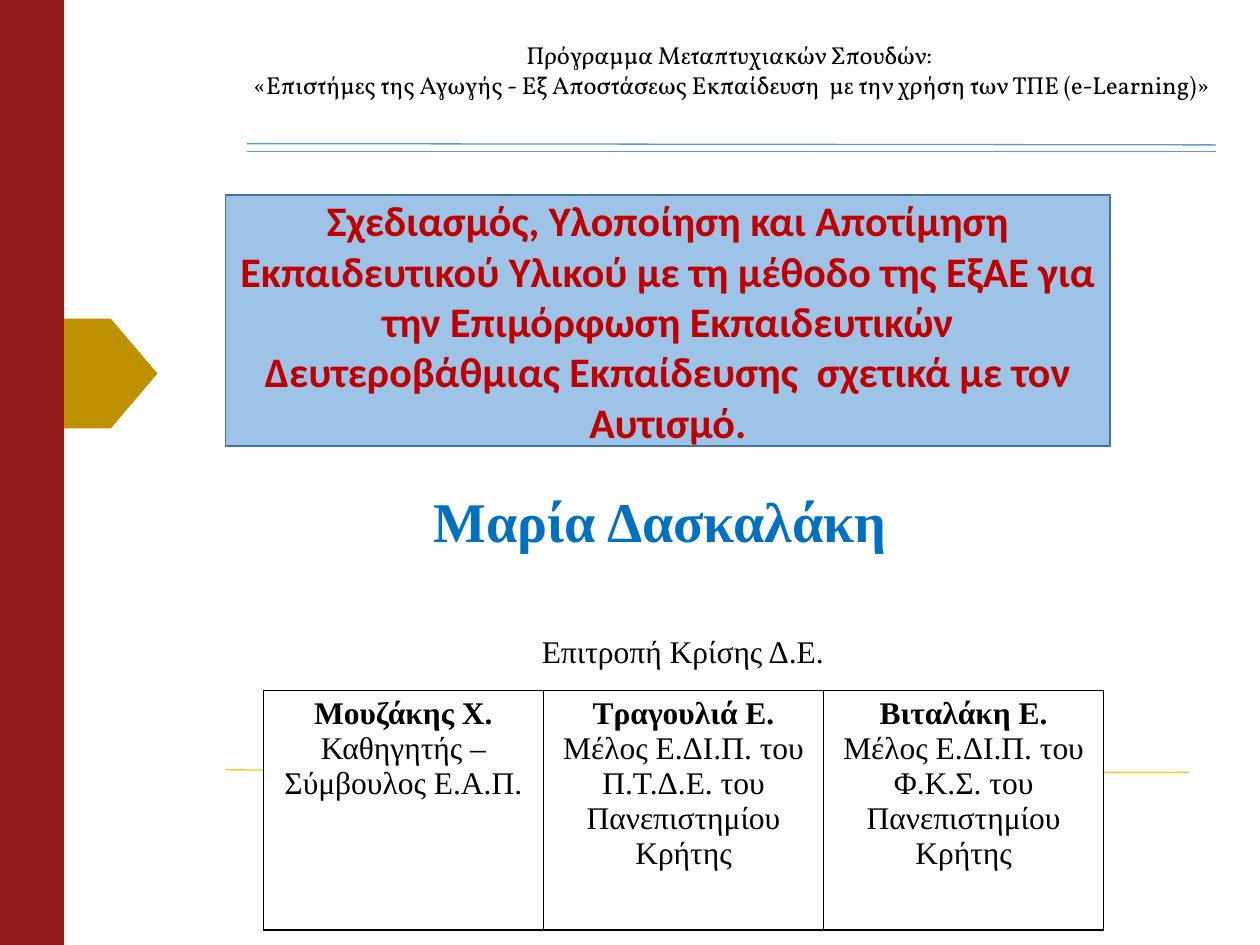
"""Build the title slide of a Greek master's thesis presentation."""
import pptx
import pptx.dml.color
import pptx.enum.shapes
import pptx.enum.text
import pptx.oxml
import pptx.oxml.ns
import pptx.util
from pptx.util import Inches

RGBColor = pptx.dml.color.RGBColor
Anchor = pptx.enum.text.MSO_ANCHOR
ShapeType = pptx.enum.shapes.MSO_SHAPE

BLACK = RGBColor(0x00, 0x00, 0x00)
WHITE = RGBColor(0xFF, 0xFF, 0xFF)
CRIMSON = RGBColor(0x93, 0x1B, 0x1B)
GOLD = RGBColor(0xBF, 0x90, 0x00)
RULE_BLUE = RGBColor(0x5B, 0x9B, 0xD5)
RULE_YELLOW = RGBColor(0xFF, 0xC6, 0x1A)
PANEL_FILL = RGBColor(0x9D, 0xC3, 0xE6)
PANEL_LINE = RGBColor(0x43, 0x73, 0x9E)
TITLE_RED = RGBColor(0xC0, 0x00, 0x00)
NAME_BLUE = RGBColor(0x00, 0x70, 0xC0)
SERIF = "Times New Roman"

TITLE = (
    "Σχεδιασμός, Υλοποίηση και Αποτίμηση Εκπαιδευτικού Υλικού με τη μέθοδο "
    "της ΕξΑΕ για την Επιμόρφωση Εκπαιδευτικών Δευτεροβάθμιας Εκπαίδευσης  "
    "σχετικά με τον Αυτισμό."
)
PROGRAMME = (
    "Πρόγραμμα Μεταπτυχιακών Σπουδών: \n"
    "«Επιστήμες της Αγωγής - Εξ Αποστάσεως Εκπαίδευση  με την χρήση των ΤΠΕ (e-Learning)»"
)
TEXT_BOXES = [
    (PROGRAMME, (1.76, 0.27, 8.1, 0.57), dict(size=14, font="Vollkorn")),
    ("Μαρία Δασκαλάκη", (1.5, 3.81, 7.48, 0.64), dict(size=32, color=NAME_BLUE, bold=True)),
    ("Επιτροπή Κρίσης Δ.Ε.", (1.68, 4.97, 7.48, 0.4), dict(size=18)),
]
COMMITTEE = [
    ("Μουζάκης Χ.", "Καθηγητής – Σύμβουλος Ε.Α.Π."),
    ("Τραγουλιά Ε.", "Μέλος Ε.ΔΙ.Π. του Π.Τ.Δ.Ε. του Πανεπιστημίου Κρήτης"),
    ("Βιταλάκη Ε.", "Μέλος Ε.ΔΙ.Π. του Φ.Κ.Σ. του Πανεπιστημίου Κρήτης"),
]
SIDE_SHAPES = [
    (ShapeType.RECTANGLE, (0, 0, 0.51, 7.5), CRIMSON),
    (ShapeType.PENTAGON, (0.51, 2.53, 0.74, 0.87), GOLD),
]
RULES = [
    ((1.96, 1.14, 9.65, 1.15), RULE_BLUE),
    ((1.96, 1.2, 9.65, 1.2), RULE_BLUE),
    ((1.79, 6.11, 9.44, 6.13), RULE_YELLOW),
]
TITLE_BOX = (1.79, 1.55, 7.02, 1.99)
TABLE_BOX = (2.09, 5.48, 6.67, 1.9)


def inches(values):
    return [Inches(value) for value in values]


def write_text(frame, text, *, size, font=SERIF, color=BLACK, bold=False,
               first_bold=False, anchor=Anchor.TOP):
    frame.word_wrap = True
    frame.vertical_anchor = anchor
    for index, line in enumerate(text.split("\n")):
        paragraph = frame.paragraphs[0] if index == 0 else frame.add_paragraph()
        paragraph.alignment = pptx.enum.text.PP_ALIGN.CENTER
        run = paragraph.add_run()
        run.text = line
        run.font.size = pptx.util.Pt(size)
        run.font.name = font
        run.font.bold = bold or (first_bold and index == 0)
        run.font.color.rgb = color


def add_rule(slide, ends, color):
    rule = slide.shapes.add_connector(pptx.enum.shapes.MSO_CONNECTOR.STRAIGHT, *inches(ends))
    rule.line.color.rgb = color
    rule.line.width = pptx.util.Pt(0.75)
    pptx.oxml.ns.qn("a:effectLst")
    rule._element.spPr.append(pptx.oxml.parse_xml(
        f"<a:effectLst {pptx.oxml.ns.nsdecls('a')}/>"))


def add_title(slide):
    title = slide.shapes.title
    title.left, title.top, title.width, title.height = inches(TITLE_BOX)
    title._element.spPr.append(pptx.oxml.parse_xml(
        f'<a:prstGeom {pptx.oxml.ns.nsdecls("a")} prst="roundRect"><a:avLst/></a:prstGeom>'))
    title.fill.solid()
    title.fill.fore_color.rgb = PANEL_FILL
    title.line.color.rgb = PANEL_LINE
    title.line.width = pptx.util.Pt(1)
    title.text_frame.auto_size = pptx.enum.text.MSO_AUTO_SIZE.NONE
    write_text(title.text_frame, TITLE, size=24, font="Calibri", color=TITLE_RED,
               bold=True, anchor=Anchor.MIDDLE)


def add_committee(slide):
    table = slide.shapes.add_table(1, len(COMMITTEE), *inches(TABLE_BOX)).table
    for cell, member in zip(table.rows[0].cells, COMMITTEE):
        properties = cell._tc.get_or_add_tcPr()
        for side in ("lnL", "lnR", "lnT", "lnB"):
            properties.append(pptx.oxml.parse_xml(
                f'<a:{side} {pptx.oxml.ns.nsdecls("a")} w="{pptx.util.Pt(1)}">'
                f'<a:solidFill><a:srgbClr val="{BLACK}"/></a:solidFill></a:{side}>'))
        cell.fill.solid()
        cell.fill.fore_color.rgb = WHITE
        write_text(cell.text_frame, "\n".join(member), size=18, first_bold=True)


def main():
    presentation = pptx.Presentation()
    presentation.slide_width, presentation.slide_height = inches((10, 7.5))
    slide = presentation.slides.add_slide(presentation.slide_layouts.get_by_name("Title Only"))
    for kind, box, color in SIDE_SHAPES:
        shape = slide.shapes.add_shape(kind, *inches(box))
        shape.shadow.inherit = False
        shape.fill.solid()
        shape.fill.fore_color.rgb = color
        shape.line.fill.background()
    for ends, color in RULES:
        add_rule(slide, ends, color)
    for text, box, style in TEXT_BOXES:
        write_text(slide.shapes.add_textbox(*inches(box)).text_frame, text, **style)
    add_committee(slide)
    add_title(slide)
    presentation.save("out.pptx")


if __name__ == "__main__":
    main()
